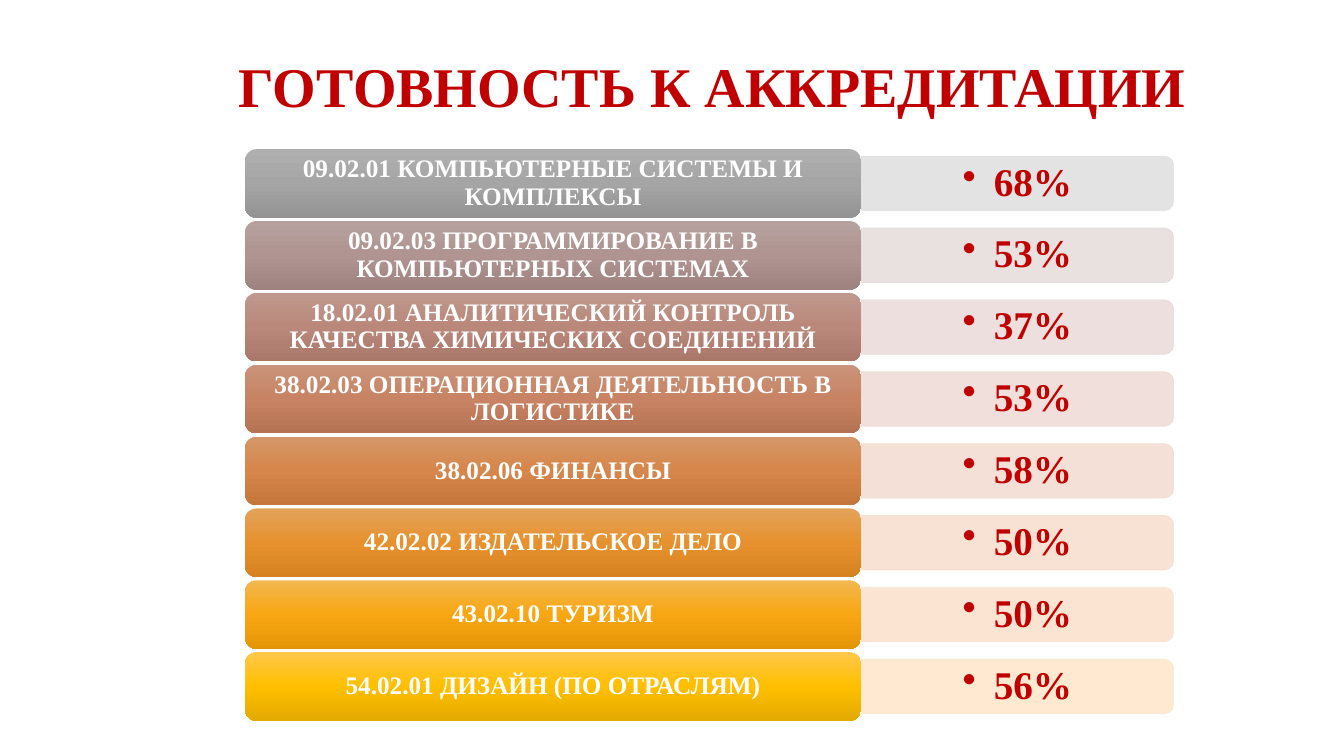
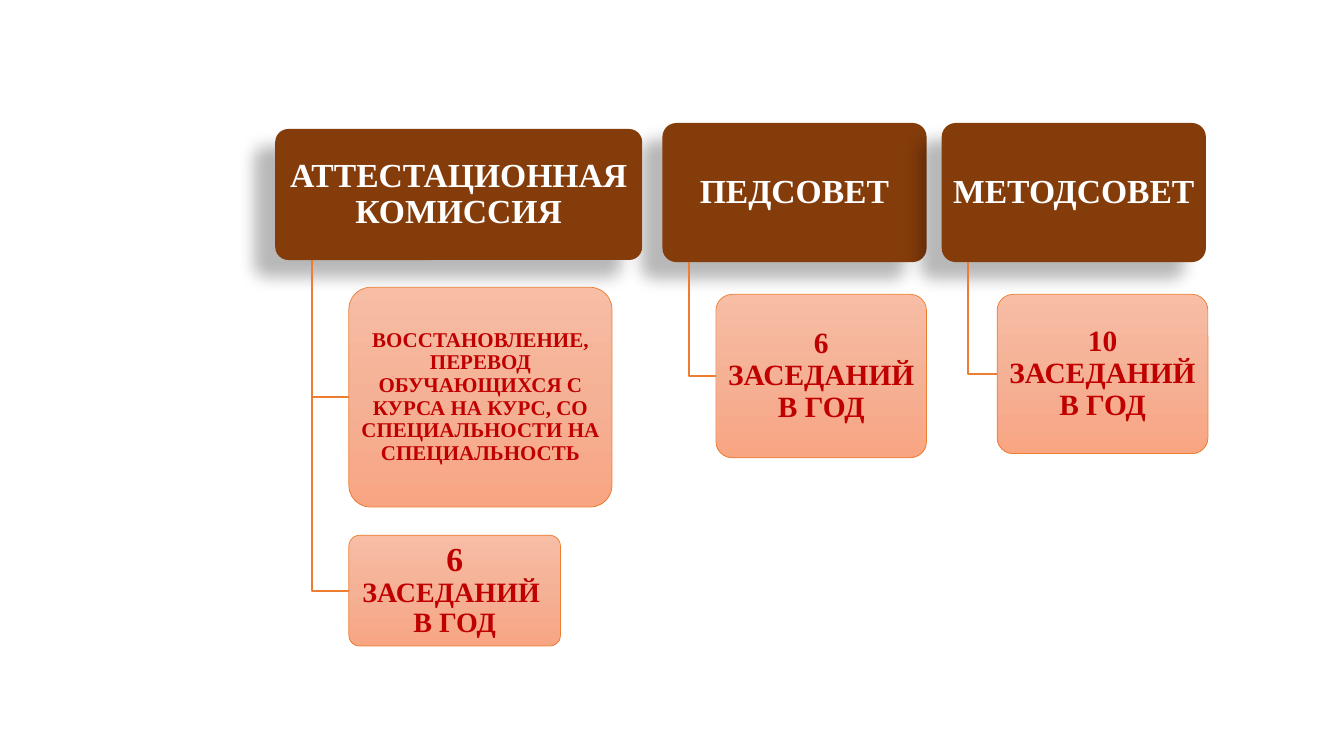
from lxml import etree
from pptx import Presentation, util as u
from pptx.dml.color import RGBColor
from pptx.enum import shapes, text
from pptx.oxml.ns import qn

FONT = "Times New Roman"
COLORS = {
    "red": "C00000", "white": "FFFFFF", "brown": "843C0B",
    "orange": "ED7D31", "shadow": "000000",
}
CARD_GRADIENT = ("F7BDA5", "F5B196", "F8A582")
READINESS = [
    ("09.02.01 КОМПЬЮТЕРНЫЕ СИСТЕМЫ И КОМПЛЕКСЫ", "68%",
     ("AFAFAF", "A5A5A5", "939393"), "E1E1E1"),
    ("09.02.03 ПРОГРАММИРОВАНИЕ В КОМПЬЮТЕРНЫХ СИСТЕМАХ", "53%",
     ("B6A19E", "AF9491", "9D827F"), "E6DEDD"),
    ("18.02.01 АНАЛИТИЧЕСКИЙ КОНТРОЛЬ КАЧЕСТВА ХИМИЧЕСКИХ СОЕДИНЕНИЙ", "37%",
     ("BF988D", "BA887B", "A9786A"), "EADCDA"),
    ("38.02.03 ОПЕРАЦИОННАЯ ДЕЯТЕЛЬНОСТЬ В ЛОГИСТИКЕ", "53%",
     ("C9947B", "C78363", "B67353"), "EFDCD6"),
    ("38.02.06 ФИНАНСЫ", "58%", ("D59769", "D6864A", "C5763A"), "F3DDD3"),
    ("42.02.02 ИЗДАТЕЛЬСКОЕ ДЕЛО", "50%",
     ("E3A35A", "E6912E", "D68220"), "F7DFD0"),
    ("43.02.10 ТУРИЗМ", "50%", ("F2B84F", "F8A612", "E59607"), "FBE3CE"),
    ("54.02.01 ДИЗАЙН (ПО ОТРАСЛЯМ)", "56%",
     ("FFC84B", "FFBF00", "E3AA00"), "FFE7CB"),
]
COUNCILS = [
    ("ПЕДСОВЕТ", (6.57, 1.22, 2.62, 1.38),
     [((7.1, 2.92, 2.09, 1.62), [[("6 ЗАСЕДАНИЙ В ГОД", 21)]])]),
    ("МЕТОДСОВЕТ", (9.34, 1.22, 2.62, 1.38),
     [((9.89, 2.92, 2.09, 1.58), [[("10 ЗАСЕДАНИЙ В ГОД", 21)]])]),
    ("АТТЕСТАЦИОННАЯ КОМИССИЯ", (2.73, 1.28, 3.64, 1.3),
     [((3.46, 2.85, 2.61, 2.18),
       [[("ВОССТАНОВЛЕНИЕ, ПЕРЕВОД ОБУЧАЮЩИХСЯ С КУРСА НА КУРС, "
          "СО СПЕЦИАЛЬНОСТИ НА СПЕЦИАЛЬНОСТЬ", 15)]]),
      ((3.46, 5.31, 2.1, 1.1),
       [[("6", 24)], [("ЗАСЕДАНИЙ ", 20)], [("В ГОД", 20)]])]),
]


def rgb(value):
    """Turn a hex string into a colour."""
    return RGBColor.from_string(value)


def inches(*values):
    """Turn numbers into lengths."""
    return [u.Inches(v) for v in values]


def write(sp, lines, color, align=text.PP_ALIGN.CENTER, insets=(0.07, 0.04)):
    """Write lines of (text, size) runs as one bold, middle-anchored paragraph."""
    tf = sp.text_frame
    tf.word_wrap = True
    tf.vertical_anchor = text.MSO_ANCHOR.MIDDLE
    tf.margin_left = tf.margin_right = u.Inches(insets[0])
    tf.margin_top = tf.margin_bottom = u.Inches(insets[1])
    p = tf.paragraphs[0]
    p.alignment = align
    p.line_spacing = 0.9
    for i, line in enumerate(lines):
        if i:
            p.add_line_break()
        for content, size in line:
            r = p.add_run()
            r.text = content
            r.font.name = FONT
            r.font.size = u.Pt(size)
            r.font.bold = True
            r.font.color.rgb = rgb(COLORS[color])
    return p


def add_bullet(p, indent):
    """Give a paragraph a round bullet with a hanging indent."""
    pPr = p._p.get_or_add_pPr()
    pPr.set("marL", str(u.Inches(indent)))
    pPr.set("indent", str(-u.Inches(indent)))
    etree.SubElement(pPr, qn("a:buChar")).set("char", "•")


def add_box(s, kind, box, fill, line=None):
    """Add a preset shape with a solid colour or a vertical gradient."""
    sp = s.shapes.add_shape(kind, *inches(*box))
    sp.shadow.inherit = False
    if isinstance(fill, str):
        sp.fill.solid()
        sp.fill.fore_color.rgb = rgb(fill)
    else:
        sp.fill.gradient()
        sp.fill.gradient_angle = 270
        stops = sp._element.spPr.find(".//" + qn("a:gsLst"))
        for old in list(stops):
            stops.remove(old)
        for pos, value in zip((0, 50000, 100000), fill):
            gs = etree.SubElement(stops, qn("a:gs"), pos=str(pos))
            etree.SubElement(gs, qn("a:srgbClr"), val=value)
    if line:
        sp.line.color.rgb = rgb(line)
        sp.line.width = u.Pt(0.5)
    else:
        sp.line.fill.background()
    return sp


def set_alpha(sp, percent):
    """Make the solid fill and line of a shape partly transparent."""
    for clr in sp._element.spPr.iter(qn("a:srgbClr")):
        etree.SubElement(clr, qn("a:alpha"), val=str(percent * 1000))


def add_shadow(sp):
    """Cast a soft shadow to the lower left."""
    effects = sp._element.spPr.find(qn("a:effectLst"))
    shadow = etree.SubElement(
        effects, qn("a:outerShdw"), blurRad=str(u.Pt(11.8)),
        dist=str(u.Pt(19.7)), dir=str(141 * 60000), algn="tr", rotWithShape="0")
    clr = etree.SubElement(shadow, qn("a:srgbClr"), val=COLORS["shadow"])
    etree.SubElement(clr, qn("a:alpha"), val="28000")


def add_title(s, content, box):
    """Add the slide title."""
    sp = s.shapes.add_textbox(*inches(*box))
    write(sp, [[(content, 40)]], "red", text.PP_ALIGN.LEFT, (0.1, 0.05))


def add_readiness_row(s, box, label, value, gradient, tint):
    """Add a programme label with its readiness bar to the right."""
    x, y, w, h = box
    label_w, bar_h = 6.11, 0.54
    bar_x, bar_w = x + label_w, w - label_w
    mid = y + h / 2
    bar = add_box(s, shapes.MSO_SHAPE.ROUND_2_SAME_RECTANGLE,
                  (bar_x + (bar_w - bar_h) / 2, mid - bar_w / 2, bar_h, bar_w),
                  tint, tint)
    bar.rotation = 90
    set_alpha(bar, 90)
    sp = s.shapes.add_textbox(*inches(bar_x, mid - 0.25, bar_w, 0.5))
    add_bullet(write(sp, [[(value, 28)]], "red", insets=(0.27, 0.14)), 0.31)
    sp = add_box(s, shapes.MSO_SHAPE.ROUNDED_RECTANGLE, (x, y, label_w, h), gradient)
    write(sp, [[(label, 18)]], "white")


def add_elbow(s, x, top, right, bottom):
    """Draw a line down and then right."""
    start, *points = [inches(*pt) for pt in ((x, top), (x, bottom), (right, bottom))]
    builder = s.shapes.build_freeform(*start)
    builder.add_line_segments(points, close=False)
    sp = builder.convert_to_shape()
    sp.shadow.inherit = False
    sp.fill.background()
    sp.line.color.rgb = rgb(COLORS["orange"])
    sp.line.width = u.Pt(1.5)


def add_council(s, box, name, cards):
    """Add a council header with its cards hanging below."""
    x, y, w, h = box
    kind = shapes.MSO_SHAPE.ROUNDED_RECTANGLE
    header = add_box(s, kind, box, COLORS["brown"])
    header.adjustments[0] = 0.1
    add_shadow(header)
    write(header, [[(name, 24)]], "white", insets=(0.05, 0.03))
    for card, lines in cards:
        left, top, _, height = card
        add_elbow(s, x + w / 10, y + h, left, top + height / 2)
        sp = add_box(s, kind, card, CARD_GRADIENT, COLORS["orange"])
        sp.adjustments[0] = 0.1
        write(sp, lines, "red", insets=(0.04, 0.03))


def readiness_slide(prs):
    """Build the accreditation readiness slide."""
    s = prs.slides.add_slide(prs.slide_layouts[6])
    add_title(s, "ГОТОВНОСТЬ К АККРЕДИТАЦИИ", (2.27, 0.16, 9.83, 1.45))
    pitch = (6.47 - 1.48) / (len(READINESS) - 1)
    for i, row in enumerate(READINESS):
        add_readiness_row(s, (2.43, 1.48 + i * pitch, 9.21, 0.68), *row)


def councils_slide(prs):
    """Build the slide of councils and their meetings."""
    s = prs.slides.add_slide(prs.slide_layouts[6])
    for name, box, cards in COUNCILS:
        add_council(s, box, name, cards)


def main():
    """Build and save the presentation."""
    prs = Presentation()
    prs.slide_width, prs.slide_height = inches(13.33, 7.5)
    readiness_slide(prs)
    councils_slide(prs)
    prs.save("out.pptx")


if __name__ == "__main__":
    main()
